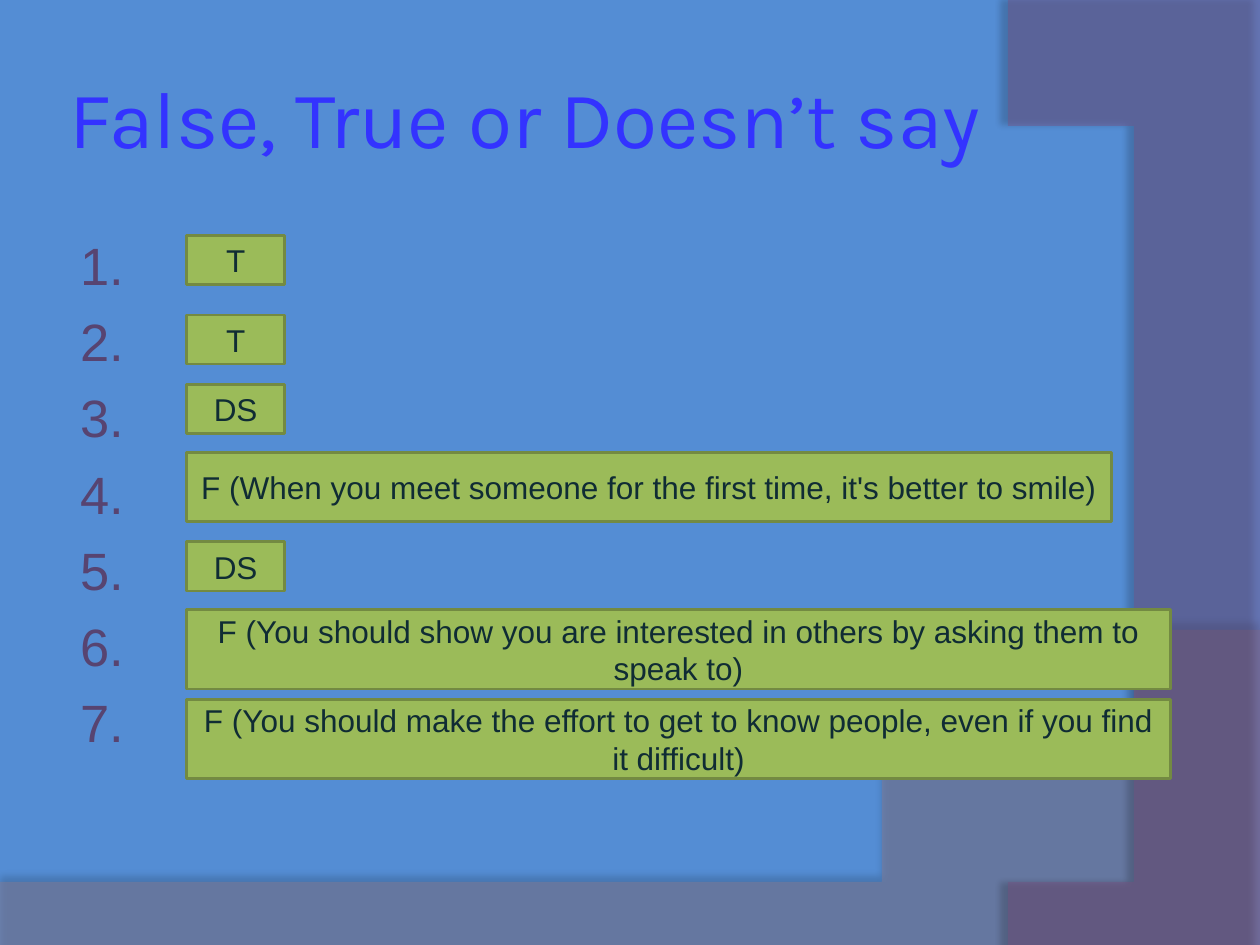
import pptx
import pptx.dml.color
import pptx.enum.text
import pptx.oxml
import pptx.oxml.ns
import pptx.util
from pptx.util import Inches, Pt

RGB = pptx.dml.color.RGBColor
ANCHOR = pptx.enum.text.MSO_ANCHOR
BLUE = RGB(0x54, 0x8D, 0xD4)
SLATE = RGB(0x8B, 0x7A, 0x8C)
PLUM = RGB(0x7B, 0x4C, 0x7D)
TITLE_BLUE = RGB(0x33, 0x33, 0xFF)
PURPLE = RGB(0x57, 0x44, 0x71)
GREEN = RGB(0x9B, 0xBB, 0x59)
OLIVE = RGB(0x73, 0x8A, 0x42)
INK = RGB(0x10, 0x2C, 0x34)

TITLE = "False, True or Doesn’t say"
SHORT, MEDIUM, LONG = (0.78, 0.39), (7.34, 0.55), (7.81, 0.63)
ANSWERS = [  # text, top, (width, height)
    ("T", 1.87, SHORT),
    ("T", 2.5, SHORT),
    ("DS", 3.05, SHORT),
    ("F (When you meet someone for the first time, it's better to smile)", 3.59, MEDIUM),
    ("DS", 4.3, SHORT),
    ("F (You should show you are interested in others by asking them to speak to)",
     4.84, LONG),
    ("F (You should make the effort to get to know people, even if you find it difficult)",
     5.55, LONG),
]
ANSWER_LEFT = 1.48

# corners, Bezier curve, colour, opacity %, shadow (opacity %, blur pt, distance pt, degrees)
WAVES = [
    ([(0, 7.05), (0, 7.51), (10, 7.51)],
     [(10, 5.2), (5.59, 7.29), (3.91, 7.19), (0, 7.05)], SLATE, 45, (35, 4, 3.5, 270)),
    ([(10, 0.02), (10, 7.5)],
     [(8.21, 7.5), (9.35, 6.19), (10.18, 3), (8, 0)], PLUM, 40, (45, 4, 4, 180)),
]


def curve_points(controls, steps=60):
    """Points along a cubic Bezier curve."""
    points = []
    for i in range(steps + 1):
        t = i / steps
        weights = ((1 - t) ** 3, 3 * t * (1 - t) ** 2, 3 * t * t * (1 - t), t ** 3)
        points.append(tuple(sum(w * c[axis] for w, c in zip(weights, controls))
                            for axis in (0, 1)))
    return points


def add_wave(slide, corners, controls, color, opacity, shadow):
    points = corners + curve_points(controls)
    builder = slide.shapes.build_freeform(*points[0], scale=Inches(1))
    builder.add_line_segments(points[1:], close=True)
    sp = builder.convert_to_shape()
    sp.fill.solid()
    sp.fill.fore_color.rgb = color
    sp.line.fill.background()
    srgb = sp.fill._xPr.find(".//" + pptx.oxml.ns.qn("a:srgbClr"))
    alpha = srgb.makeelement(pptx.oxml.ns.qn("a:alpha"), {"val": str(opacity * 1000)})
    srgb.append(alpha)
    strength, blur, distance, angle = shadow
    sp._element.spPr.append(pptx.oxml.parse_xml(
        f'<a:effectLst {pptx.oxml.ns.nsdecls("a")}>'
        f'<a:outerShdw blurRad="{Pt(blur)}" dist="{Pt(distance)}" dir="{angle * 60000}"'
        f' algn="ctr" rotWithShape="0"><a:srgbClr val="000000">'
        f'<a:alpha val="{strength * 1000}"/></a:srgbClr></a:outerShdw></a:effectLst>'))


def add_run(p, text, size, font, color):
    r = p.add_run()
    r.text = text
    r.font.size = Pt(size)
    r.font.name = font
    r.font.color.rgb = color


def add_title(slide):
    tf = slide.shapes.add_textbox(Inches(0.5), Inches(0.3), Inches(8.17), Inches(1.25)).text_frame
    tf.word_wrap = True
    tf.vertical_anchor = ANCHOR.MIDDLE
    tf.margin_left = tf.margin_right = Inches(0.05)
    add_run(tf.paragraphs[0], TITLE, 46, "Karla", TITLE_BLUE)


def add_numbers(slide):
    tf = slide.shapes.add_textbox(Inches(0.5), Inches(1.75), Inches(8.17), Inches(4.95)).text_frame
    tf.word_wrap = True
    tf.margin_top = Inches(0.1)
    for number in range(1, len(ANSWERS) + 1):
        p = tf.paragraphs[0] if number == 1 else tf.add_paragraph()
        if number > 1:
            p.space_before = Pt(7.5)
        pPr = p._p.get_or_add_pPr()
        pPr.set("marL", str(Inches(0.46)))
        pPr.set("indent", str(Inches(-0.42)))
        add_run(p, f"{number}.", 30, "Arial", PURPLE)


def add_answer(slide, text, top, size):
    width, height = size
    sp = slide.shapes.add_shape(pptx.enum.shapes.MSO_SHAPE.RECTANGLE, Inches(ANSWER_LEFT),
                                Inches(top), Inches(width), Inches(height))
    sp.shadow.inherit = False
    sp.fill.solid()
    sp.fill.fore_color.rgb = GREEN
    sp.line.color.rgb = OLIVE
    sp.line.width = Pt(1.5)
    tf = sp.text_frame
    tf.word_wrap = True
    tf.vertical_anchor = ANCHOR.MIDDLE
    p = tf.paragraphs[0]
    p.alignment = pptx.enum.text.PP_ALIGN.CENTER
    add_run(p, text, 18, "Arial", INK)


def main():
    prs = pptx.Presentation()
    prs.slide_width, prs.slide_height = Inches(10), Inches(7.5)
    s = prs.slides.add_slide(prs.slide_layouts[6])
    s.background.fill.solid()
    s.background.fill.fore_color.rgb = BLUE
    for wave in WAVES:
        add_wave(s, *wave)
    add_title(s)
    add_numbers(s)
    for answer in ANSWERS:
        add_answer(s, *answer)
    prs.save("out.pptx")


if __name__ == "__main__":
    main()
